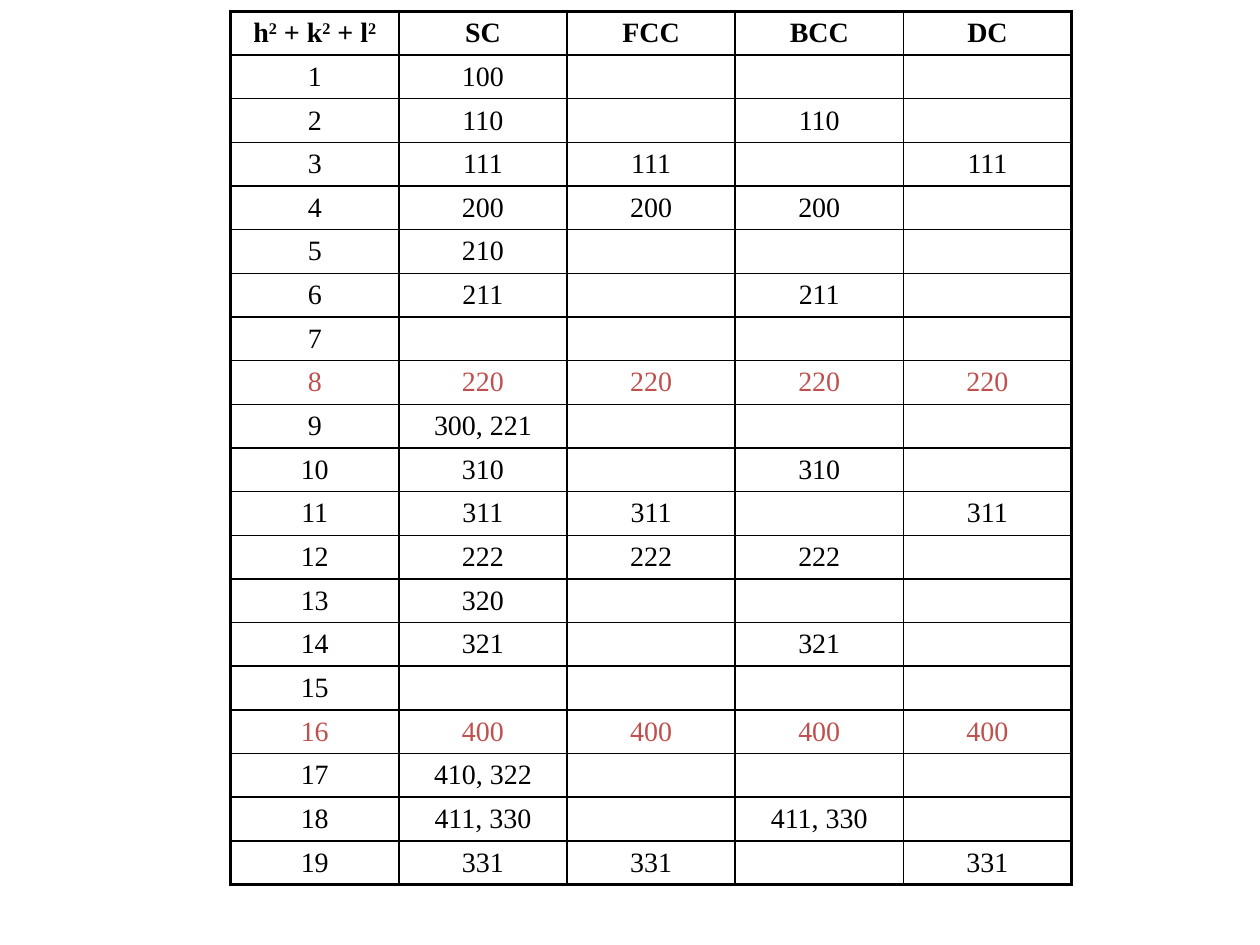
from dataclasses import dataclass

from lxml.etree import SubElement
from pptx import Presentation
from pptx.dml.color import RGBColor
from pptx.enum.text import MSO_ANCHOR, PP_ALIGN
from pptx.oxml.ns import qn
from pptx.util import Cm, Pt


@dataclass(frozen=True)
class Theme:
    font: str = "Times New Roman"
    size: float = 16
    ink: str = "000000"
    accent: str = "C0504D"
    inner_line: float = 1
    outer_line: float = 2.25


THEME = Theme()
SUPERSCRIPT = "30000"

# Each heading is a list of (text, is superscript) runs
HEADINGS = [
    [("h", False), ("2", True), (" + k", False), ("2", True), (" + l", False), ("2", True)],
    [("SC", False)], [("FCC", False)], [("BCC", False)], [("DC", False)],
]

# Reflections in SC, FCC, BCC and DC for sums 1, 2, 3, ...
REFLECTIONS = [
    ("100", "", "", ""),
    ("110", "", "110", ""),
    ("111", "111", "", "111"),
    ("200", "200", "200", ""),
    ("210", "", "", ""),
    ("211", "", "211", ""),
    ("", "", "", ""),
    ("220", "220", "220", "220"),
    ("300, 221", "", "", ""),
    ("310", "", "310", ""),
    ("311", "311", "", "311"),
    ("222", "222", "222", ""),
    ("320", "", "", ""),
    ("321", "", "321", ""),
    ("", "", "", ""),
    ("400", "400", "400", "400"),
    ("410, 322", "", "", ""),
    ("411, 330", "", "411, 330", ""),
    ("331", "331", "", "331"),
]


def add_border(cell, side, width):
    ln = SubElement(cell._tc.get_or_add_tcPr(), qn(f"a:ln{side}"), w=str(Pt(width)))
    fill = SubElement(ln, qn("a:solidFill"))
    SubElement(fill, qn("a:srgbClr"), val=THEME.ink)


def format_cell(cell, outer_sides):
    cell.margin_top = cell.margin_bottom = 0
    cell.vertical_anchor = MSO_ANCHOR.MIDDLE
    for side in "LRTB":
        add_border(cell, side, THEME.outer_line if side in outer_sides else THEME.inner_line)
    cell.fill.background()


def add_run(p, text, color, bold=False, superscript=False):
    r = p.add_run()
    r.text = text
    r.font.name = THEME.font
    r.font.size = Pt(THEME.size)
    r.font.bold = bold
    r.font.color.rgb = RGBColor.from_string(color)
    if superscript:
        r.font._element.set("baseline", SUPERSCRIPT)


def write_cell(cell, runs, color, bold=False):
    p = cell.text_frame.paragraphs[0]
    p.alignment = PP_ALIGN.CENTER
    for text, superscript in runs:
        add_run(p, text, color, bold, superscript)


def add_grid(s, n_rows, n_cols, left, top, col_width, row_height):
    table = s.shapes.add_table(n_rows, n_cols, left, top,
                               col_width * n_cols, row_height * n_rows).table
    table.first_row = table.horz_banding = False
    for i in range(n_rows):
        for j in range(n_cols):
            edges = {"L": j == 0, "R": j == n_cols - 1, "T": i == 0, "B": i == n_rows - 1}
            format_cell(table.cell(i, j), [side for side, outer in edges.items() if outer])
    return table


def main():
    prs = Presentation()
    prs.slide_width, prs.slide_height = Cm(25.4), Cm(19.05)
    s = prs.slides.add_slide(prs.slide_layouts[6])

    table = add_grid(s, len(REFLECTIONS) + 1, len(HEADINGS),
                     Cm(4.65), Cm(0.23), Cm(3.39), Cm(0.88))

    # Heading row
    for j, runs in enumerate(HEADINGS):
        write_cell(table.cell(0, j), runs, THEME.ink, bold=True)

    # One row per sum; a row is accented when every lattice reflects
    for total, reflections in enumerate(REFLECTIONS, start=1):
        color = THEME.accent if all(reflections) else THEME.ink
        for j, text in enumerate((str(total), *reflections)):
            if text:
                write_cell(table.cell(total, j), [(text, False)], color)

    prs.save("out.pptx")


if __name__ == "__main__":
    main()
